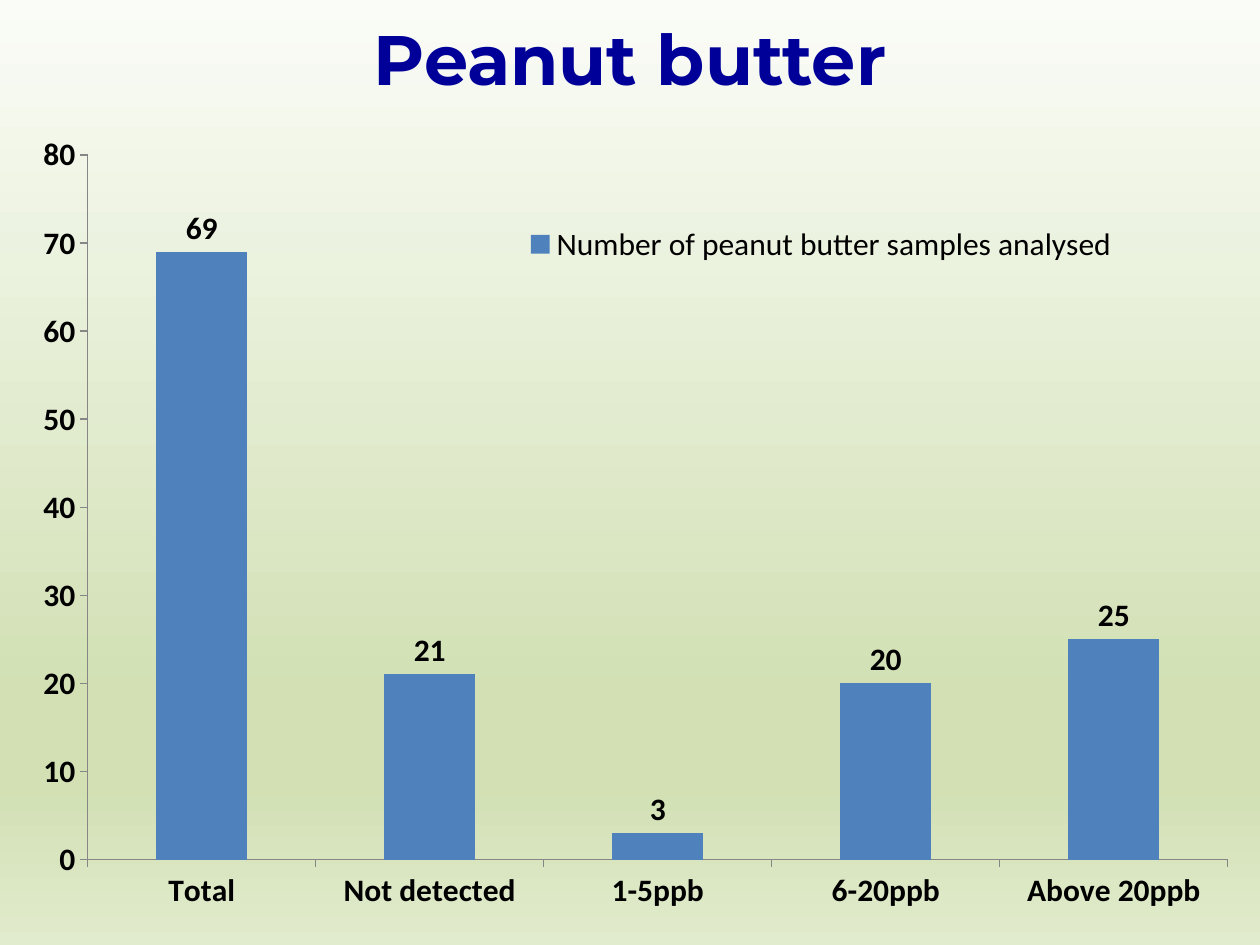
from dataclasses import dataclass

from lxml import etree
from pptx import Presentation
from pptx.chart.data import CategoryChartData
from pptx.dml.color import RGBColor
from pptx.enum.chart import XL_CHART_TYPE, XL_LABEL_POSITION, XL_LEGEND_POSITION, XL_TICK_MARK
from pptx.enum.text import MSO_ANCHOR, PP_ALIGN
from pptx.oxml import parse_xml
from pptx.oxml.ns import nsdecls, qn
from pptx.util import Inches, Pt

COLUMNS = XL_CHART_TYPE.COLUMN_CLUSTERED
LABEL_ABOVE = XL_LABEL_POSITION.OUTSIDE_END
LEGEND_RIGHT = XL_LEGEND_POSITION.RIGHT
TICK_OUTSIDE = XL_TICK_MARK.OUTSIDE
MIDDLE = MSO_ANCHOR.MIDDLE
CENTER = PP_ALIGN.CENTER

TITLE = "Peanut butter"
SERIES = "Number of peanut butter samples analysed"
SAMPLES = {"Total": 69, "Not detected": 21, "1-5ppb": 3, "6-20ppb": 20, "Above 20ppb": 25}

PAGE_SIZE = (10, 7.5)
TITLE_BOX = (0.5, 0, 9, 1)
CHART_BOX = (0.25, 1.08, 9.5, 6.17)
# Shares of the chart's width and height: left, top, width, height
PLOT_SHARE = (0.047, 0.014, 0.953, 0.916)
LEGEND_SHARE = (0.41, 0.09, 0.5, 0.08)


@dataclass(frozen=True)
class Theme:
    title_font: str = "Montserrat"
    chart_font: str = "Calibri"
    title_size: int = 40
    chart_size: int = 18
    title: str = "000099"
    text: str = "000000"
    bar: str = "4F81BD"
    axis: str = "868686"
    background: tuple = ((0, "FAFCF7"), (74, "D2E0B4"), (83, "D2E0B4"), (100, "E1EBCD"))


THEME = Theme()


def format_font(font, name=THEME.chart_font, size=THEME.chart_size, color=THEME.text, bold=False):
    font.name, font.size, font.bold = name, Pt(size), bold
    font.color.rgb = RGBColor.from_string(color)


def set_background(page):
    stops = "".join(
        f'<a:gs pos="{share * 1000}"><a:srgbClr val="{color}"/></a:gs>'
        for share, color in THEME.background
    )
    page.element.cSld.insert(0, parse_xml(
        f'<p:bg {nsdecls("p", "a")}><p:bgPr><a:gradFill><a:gsLst>{stops}</a:gsLst>'
        '<a:lin ang="5400000" scaled="0"/></a:gradFill><a:effectLst/></p:bgPr></p:bg>'
    ))


def fill_layout(layout, shares, inner=False):
    """Fill a c:layout element with a manual position in shares of the chart."""
    for child in list(layout):
        layout.remove(child)
    manual = etree.SubElement(layout, qn("c:manualLayout"))
    settings = [("layoutTarget", "inner")] if inner else []
    settings += [("xMode", "edge"), ("yMode", "edge"), *zip("xywh", shares)]
    for tag, value in settings:
        etree.SubElement(manual, qn(f"c:{tag}")).set("val", str(value))


def add_title(page):
    title = page.shapes.title
    title.left, title.top, title.width, title.height = map(Inches, TITLE_BOX)
    title.text_frame.text = TITLE
    title.text_frame.vertical_anchor = MIDDLE
    para = title.text_frame.paragraphs[0]
    para.alignment, para.line_spacing = CENTER, 0.9
    format_font(para.runs[0].font, THEME.title_font, THEME.title_size, THEME.title, bold=True)


def format_axis(axis):
    axis.has_major_gridlines = False
    axis.major_tick_mark = TICK_OUTSIDE
    axis.format.line.width = Pt(0.75)
    axis.format.line.color.rgb = RGBColor.from_string(THEME.axis)
    format_font(axis.tick_labels.font, bold=True)


def add_chart(page):
    data = CategoryChartData()
    data.categories = list(SAMPLES)
    data.add_series(SERIES, list(SAMPLES.values()))
    chart = page.shapes.add_chart(COLUMNS, *map(Inches, CHART_BOX), data).chart
    chart.has_title = False
    format_font(chart.font)

    for axis in (chart.category_axis, chart.value_axis):
        format_axis(axis)
    chart.value_axis.minimum_scale = 0
    chart.value_axis.maximum_scale = 80
    chart.value_axis.major_unit = 10

    plot = chart.plots[0]
    plot.gap_width = 150
    plot.vary_by_categories = False
    bars = plot.series[0]
    bars.format.fill.solid()
    bars.format.fill.fore_color.rgb = RGBColor.from_string(THEME.bar)
    labels = bars.data_labels
    labels.show_value = True
    labels.position = LABEL_ABOVE
    format_font(labels.font, bold=True)

    chart.has_legend = True
    legend = chart.legend
    legend.position = LEGEND_RIGHT
    legend.include_in_layout = False
    format_font(legend.font)

    plot_area = chart.element.chart.plotArea
    plot_layout = plot_area.find(qn("c:layout"))
    if plot_layout is None:
        plot_layout = etree.Element(qn("c:layout"))
        plot_area.insert(0, plot_layout)
    fill_layout(plot_layout, PLOT_SHARE, inner=True)

    legend_element = chart.element.chart.find(qn("c:legend"))
    legend_layout = legend_element.find(qn("c:layout"))
    if legend_layout is None:
        legend_layout = etree.Element(qn("c:layout"))
        legend_element.find(qn("c:legendPos")).addnext(legend_layout)
    fill_layout(legend_layout, LEGEND_SHARE)


def main():
    deck = Presentation()
    deck.slide_width, deck.slide_height = map(Inches, PAGE_SIZE)
    page = deck.slides.add_slide(deck.slide_layouts.get_by_name("Title Only"))
    set_background(page)
    add_title(page)
    add_chart(page)
    deck.save("out.pptx")


if __name__ == "__main__":
    main()
